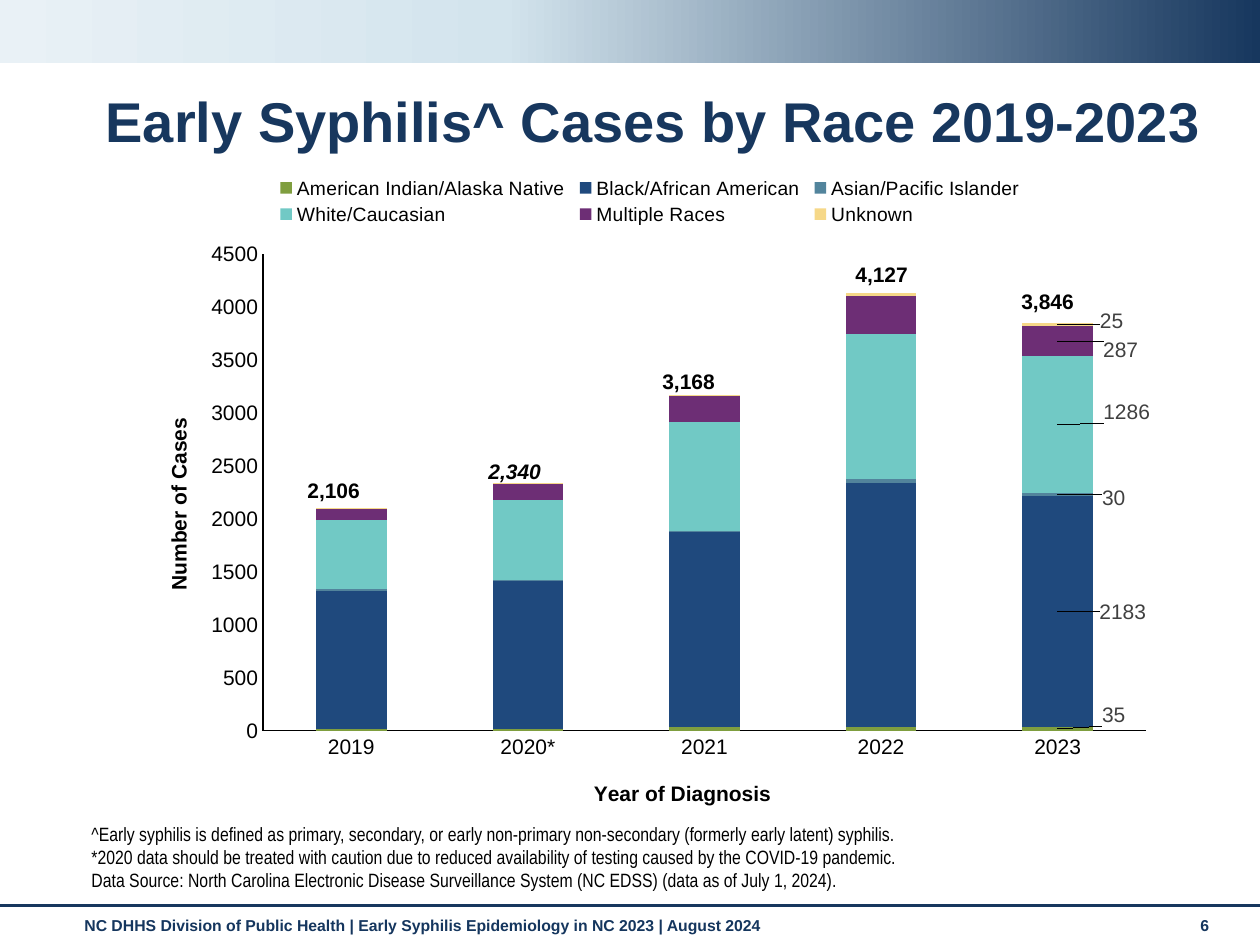
import copy
from dataclasses import dataclass

import pptx
import pptx.chart.data
import pptx.dml.color
import pptx.enum.chart
import pptx.enum.shapes
import pptx.enum.text
import pptx.oxml
import pptx.oxml.ns
import pptx.util

EMU_PER_PX = 914400 / 126
CHART_BOX = (134, 161, 1034, 667)


@dataclass(frozen=True)
class Theme:
    font: str = "Arial"
    note_font: str = "Arial Narrow"
    navy: str = "17375E"
    footer: str = "15365E"
    text: str = "000000"
    label: str = "404040"
    band: tuple = ((0, "17375E"), (0.6, "D3E4ED"), (1, "E9F1F6"))
    title_size: int = 32
    body_size: int = 12
    legend_size: int = 11
    note_size: int = 11
    footer_size: int = 9


THEME = Theme()

YEARS = ["2019", "2020*", "2021", "2022", "2023"]
RACES = [
    ("American Indian/Alaska Native", "7F9E3F", (16, 16, 32, 39, 35), (56, -14)),
    ("Black/African American", "1F497D", (1304, 1396, 1840, 2295, 2183), (65, 1)),
    ("Asian/Pacific Islander", "52849C", (17, 11, 15, 39, 30), (56, 4)),
    ("White/Caucasian", "71C9C5", (656, 758, 1026, 1375, 1286), (69, -12)),
    ("Multiple Races", "6D2E75", (112, 154, 251, 356, 287), (63, 9)),
    ("Unknown", "F6D888", (1, 5, 4, 23, 25), (54, -3)),
]
TOTALS = [
    ("2,106", 295, 471, False),
    ("2,340", 476, 452, True),
    ("3,168", 650, 362, False),
    ("4,127", 843, 255, False),
    ("3,846", 1009, 282, False),
]
NOTES = [
    "^Early syphilis is defined as primary, secondary, or early non-primary non-secondary (formerly early latent) syphilis.",
    "*2020 data should be treated with caution due to reduced availability of testing caused by the COVID-19 pandemic.",
    "Data Source: North Carolina Electronic Disease Surveillance System (NC EDSS) (data as of July 1, 2024).",
]


def px(length):
    return pptx.util.Emu(round(length * EMU_PER_PX))


def rgb(code):
    return pptx.dml.color.RGBColor.from_string(code)


def style_font(font, size, color, bold=False, italic=False, name=THEME.font):
    font.name = name
    font.size = pptx.util.Pt(size)
    font.bold = bold
    font.italic = italic
    font.color.rgb = rgb(color)


def add_text(slide, box, lines, size, color=THEME.text, anchor="TOP", **style):
    shape = slide.shapes.add_textbox(*map(px, box))
    frame = shape.text_frame
    frame.word_wrap = True
    frame.vertical_anchor = getattr(pptx.enum.text.MSO_ANCHOR, anchor)
    frame.text = "\n".join(lines)
    for para in frame.paragraphs:
        for span in para.runs:
            style_font(span.font, size, color, **style)


def set_title(slide, text):
    title = slide.shapes.title
    title.left, title.top, title.width, title.height = map(px, (93, 86, 1150, 76))
    frame = title.text_frame
    frame.text = text
    frame.vertical_anchor = pptx.enum.text.MSO_ANCHOR.MIDDLE
    para = frame.paragraphs[0]
    para.alignment = pptx.enum.text.PP_ALIGN.LEFT
    para.line_spacing = 0.9
    style_font(para.runs[0].font, THEME.title_size, THEME.navy, bold=True)


def add_band(slide):
    band = slide.shapes.add_shape(
        pptx.enum.shapes.MSO_SHAPE.RECTANGLE, *map(px, (0, 0, 1260, 63)))
    band.shadow.inherit = False
    band.line.fill.background()
    band.fill.gradient()
    band.fill.gradient_angle = 180
    stop_list = band.fill._fill._gradFill.gsLst
    stop_list.append(copy.deepcopy(stop_list[-1]))
    for stop, (position, color) in zip(band.fill.gradient_stops, THEME.band):
        stop.position = position
        stop.color.rgb = rgb(color)


def add_rule(slide, y):
    rule = slide.shapes.add_connector(
        pptx.enum.shapes.MSO_CONNECTOR.STRAIGHT, px(0), px(y), px(1260), px(y))
    rule.line.color.rgb = rgb(THEME.navy)
    rule.line.width = pptx.util.Pt(1.75)
    properties = rule._element.spPr
    properties.append(properties.makeelement(pptx.oxml.ns.qn("a:effectLst"), {}))


def make_layout(inner=False, edge=True, **fractions):
    target = '<c:layoutTarget val="inner"/>' if inner else ""
    modes = '<c:xMode val="edge"/><c:yMode val="edge"/>' if edge else ""
    sizes = "".join(f'<c:{key} val="{value:.4f}"/>' for key, value in fractions.items())
    return pptx.oxml.parse_xml(
        f'<c:layout {pptx.oxml.ns.nsdecls("c")}><c:manualLayout>'
        f"{target}{modes}{sizes}</c:manualLayout></c:layout>")


def place(element, after, left, top, width=None, height=None, inner=False):
    chart_left, chart_top, chart_width, chart_height = CHART_BOX
    fractions = {"x": (left - chart_left) / chart_width, "y": (top - chart_top) / chart_height}
    if width:
        fractions.update(w=width / chart_width, h=height / chart_height)
    for old in element.findall(pptx.oxml.ns.qn("c:layout")):
        element.remove(old)
    layout = make_layout(inner, **fractions)
    if after:
        element.find(pptx.oxml.ns.qn(after)).addnext(layout)
    else:
        element.insert(0, layout)


def style_axis(axis, title, left, top):
    axis.has_major_gridlines = False
    axis.major_tick_mark = pptx.enum.chart.XL_TICK_MARK.NONE
    axis.minor_tick_mark = pptx.enum.chart.XL_TICK_MARK.NONE
    axis.format.line.color.rgb = rgb(THEME.text)
    axis.format.line.width = pptx.util.Pt(0.75)
    style_font(axis.tick_labels.font, THEME.body_size, THEME.text)
    frame = axis.axis_title.text_frame
    frame.text = title
    style_font(frame.paragraphs[0].runs[0].font, THEME.body_size, THEME.text, bold=True)
    place(axis.axis_title._element, "c:tx", left, top)


def style_series(series, color, offset):
    series.format.fill.solid()
    series.format.fill.fore_color.rgb = rgb(color)
    series.data_labels.show_value = False
    label = series.points[len(YEARS) - 1].data_label
    style_font(label.font, THEME.body_size, THEME.label)
    label.position = pptx.enum.chart.XL_LABEL_POSITION.CENTER
    labels = series.data_labels._element
    for leader in labels.findall(pptx.oxml.ns.qn("c:showLeaderLines")):
        labels.remove(leader)
    index = labels.find(pptx.oxml.ns.qn("c:dLbl")).find(pptx.oxml.ns.qn("c:idx"))
    dx, dy = offset
    index.addnext(make_layout(edge=False, x=dx / CHART_BOX[2], y=dy / CHART_BOX[3]))


def add_case_chart(slide):
    data = pptx.chart.data.CategoryChartData(number_format="########0")
    data.categories = YEARS
    for name, _, values, _ in RACES:
        data.add_series(name, values)
    chart = slide.shapes.add_chart(
        pptx.enum.chart.XL_CHART_TYPE.COLUMN_STACKED, *map(px, CHART_BOX), data).chart
    style_font(chart.font, 10, THEME.text)
    chart.has_title = False
    chart.has_legend = True
    chart.legend.position = pptx.enum.chart.XL_LEGEND_POSITION.TOP
    chart.legend.include_in_layout = False
    style_font(chart.legend.font, THEME.legend_size, THEME.text)
    place(chart.legend._element, "c:legendPos", 272, 173, 756, 56)
    plot = chart.plots[0]
    plot.gap_width = 150
    plot.overlap = 100
    plot.vary_by_categories = False
    for series, (_, color, _, offset) in zip(plot.series, RACES):
        style_series(series, color, offset)
    style_axis(chart.category_axis, "Year of Diagnosis", 590, 777)
    style_axis(chart.value_axis, "Number of Cases", 162, 414)
    values = chart.value_axis
    values.minimum_scale, values.maximum_scale, values.major_unit = 0, 4500, 500
    values.axis_title.text_frame._txBody.bodyPr.set("rot", "-5400000")
    place(chart._chartSpace.chart.plotArea, None, 263, 254, 883, 477, inner=True)


def main():
    deck = pptx.Presentation()
    deck.slide_width, deck.slide_height = px(1260), px(945)
    page = deck.slides.add_slide(deck.slide_layouts[5])
    add_text(page, (72, 910, 1101, 36),
             ["NC DHHS Division of Public Health | Early Syphilis Epidemiology in NC 2023 | August 2024"],
             THEME.footer_size, THEME.footer, bold=True)
    add_text(page, (1188, 910, 55, 38), ["6"], THEME.footer_size, THEME.footer, bold=True)
    add_band(page)
    add_rule(page, 906)
    set_title(page, "Early Syphilis^ Cases by Race 2019-2023")
    add_text(page, (79, 819, 1101, 79), NOTES, THEME.note_size,
             anchor="BOTTOM", name=THEME.note_font)
    add_case_chart(page)
    for total, left, top, italic in TOTALS:
        add_text(page, (left, top, 91, 38), [total], THEME.body_size, bold=True, italic=italic)
    deck.save("out.pptx")


if __name__ == "__main__":
    main()
